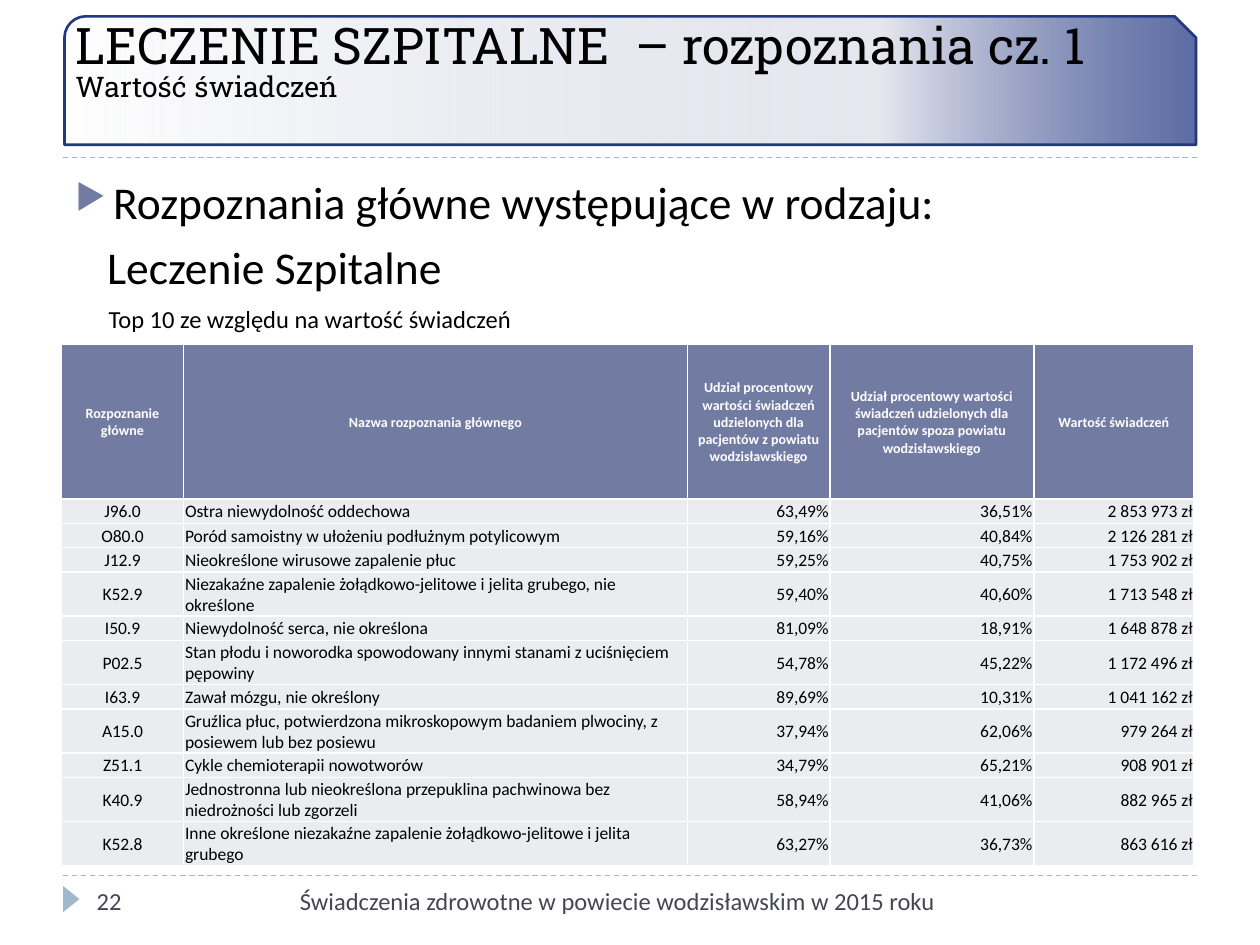
from collections import namedtuple

from lxml import etree
from pptx import Presentation
from pptx import util as u
from pptx.dml.color import RGBColor
from pptx.enum import dml, shapes, text
from pptx.oxml import ns, parse_xml

Box = namedtuple("Box", "left top width height")

BLACK = RGBColor(0x00, 0x00, 0x00)
WHITE = RGBColor(0xFF, 0xFF, 0xFF)
NAVY = RGBColor(0x23, 0x38, 0x83)
MIST = RGBColor(0xE6, 0xE7, 0xEF)
HAZE = RGBColor(0xCC, 0xD0, 0xE0)
SLATE = RGBColor(0x72, 0x7C, 0xA3)
PALE = RGBColor(0xEB, 0xEC, 0xF0)
SKY = RGBColor(0x9F, 0xB8, 0xCD)
GREY = RGBColor(0x46, 0x46, 0x53)

BODY_FONT = "Calibri"
TITLE_FONT = "Roboto Slab"
LEFT, CENTER, RIGHT = text.PP_ALIGN.LEFT, text.PP_ALIGN.CENTER, text.PP_ALIGN.RIGHT

HEADERS = (
    "Rozpoznanie główne",
    "Nazwa rozpoznania głównego",
    "Udział procentowy wartości świadczeń udzielonych dla pacjentów z powiatu wodzisławskiego",
    "Udział procentowy wartości świadczeń udzielonych dla pacjentów spoza powiatu wodzisławskiego",
    "Wartość świadczeń",
)
DIAGNOSES = (
    ("J96.0", "Ostra niewydolność oddechowa", "63,49%", "36,51%", "2 853 973 zł"),
    ("O80.0", "Poród samoistny w ułożeniu podłużnym potylicowym", "59,16%", "40,84%", "2 126 281 zł"),
    ("J12.9", "Nieokreślone wirusowe zapalenie płuc", "59,25%", "40,75%", "1 753 902 zł"),
    ("K52.9", "Niezakaźne zapalenie żołądkowo-jelitowe i jelita grubego, nie określone",
     "59,40%", "40,60%", "1 713 548 zł"),
    ("I50.9", "Niewydolność serca, nie określona", "81,09%", "18,91%", "1 648 878 zł"),
    ("P02.5", "Stan płodu i noworodka spowodowany innymi stanami z uciśnięciem pępowiny",
     "54,78%", "45,22%", "1 172 496 zł"),
    ("I63.9", "Zawał mózgu, nie określony", "89,69%", "10,31%", "1 041 162 zł"),
    ("A15.0", "Gruźlica płuc, potwierdzona mikroskopowym badaniem plwociny, z posiewem lub bez posiewu",
     "37,94%", "62,06%", "979 264 zł"),
    ("Z51.1", "Cykle chemioterapii nowotworów", "34,79%", "65,21%", "908 901 zł"),
    ("K40.9", "Jednostronna lub nieokreślona przepuklina pachwinowa bez niedrożności lub zgorzeli",
     "58,94%", "41,06%", "882 965 zł"),
    ("K52.8", "Inne określone niezakaźne zapalenie żołądkowo-jelitowe i jelita grubego",
     "63,27%", "36,73%", "863 616 zł"),
)
COLUMN_WIDTHS = (2.46, 10.16, 2.87, 4.11, 3.23)
COLUMN_ALIGNS = (CENTER, LEFT, RIGHT, RIGHT, RIGHT)
HEADER_HEIGHT, ONE_LINE, TWO_LINES = 3.12, 0.49, 0.89
LONGEST_LINE = 60


def lengths(box):
    return [u.Cm(value) for value in box]


def add_span(para, words, size, color, font=BODY_FONT, bold=False):
    span = para.add_run()
    span.text = words
    span.font.size = u.Pt(size)
    span.font.name = font
    span.font.bold = bold
    span.font.color.rgb = color


def add_text_frame(page, box, inset):
    frame = page.shapes.add_textbox(*lengths(box)).text_frame
    frame.word_wrap = True
    frame.margin_top = frame.margin_bottom = u.Cm(inset)
    return frame


def add_rule(page, left, top, width):
    rule = page.shapes.add_connector(
        shapes.MSO_CONNECTOR.STRAIGHT, *lengths((left, top, left + width, top)))
    rule.line.color.rgb = SKY
    rule.line.width = u.Pt(0.75)
    rule.line.dash_style = dml.MSO_LINE.DASH
    etree.SubElement(rule._element.spPr, ns.qn("a:effectLst"))


def fade_fill(shape):
    stops = "".join(
        f'<a:gs pos="{place * 1000}"><a:srgbClr val="{color}">'
        f'<a:alpha val="{opacity * 1000}"/></a:srgbClr></a:gs>'
        for place, color, opacity in ((0, NAVY, 73), (28, MIST, 100), (100, HAZE, 0)))
    shape.fill.background()
    blank = shape._element.spPr.find(ns.qn("a:noFill"))
    blank.getparent().replace(blank, parse_xml(
        f'<a:gradFill {ns.nsdecls("a")} rotWithShape="1"><a:gsLst>{stops}</a:gsLst>'
        '<a:lin ang="10800000" scaled="0"/></a:gradFill>'))


def add_title(page, box):
    banner = page.shapes.add_shape(
        shapes.MSO_SHAPE.SNIP_ROUND_RECTANGLE, *lengths(box))
    banner.shadow.inherit = False
    fade_fill(banner)
    banner.line.color.rgb = NAVY
    banner.line.width = u.Pt(1.5)
    frame = add_text_frame(
        page, Box(box.left - 0.03, box.top - 0.05, box.width, box.height), 0)
    add_span(frame.paragraphs[0], "LECZENIE SZPITALNE  – rozpoznania cz. 1",
             28.8, BLACK, TITLE_FONT)
    subtitle = frame.add_paragraph()
    subtitle.line_spacing = 0.85
    add_span(subtitle, "Wartość świadczeń", 16.2, BLACK, TITLE_FONT)
    add_rule(page, box.left - 0.03, box.top + box.height + 0.25, 22.86)


def add_intro(page, box):
    frame = add_text_frame(page, box, 0.13)
    lines = (
        ("Rozpoznania główne występujące w rodzaju:", 26, 0.76, -0.76),
        ("Leczenie Szpitalne", 26, 0.64, 0),
        ("Top 10 ze względu na wartość świadczeń", 14, 0.67, 0),
    )
    for index, (words, size, margin, indent) in enumerate(lines):
        para = frame.add_paragraph() if index else frame.paragraphs[0]
        para.alignment = text.PP_ALIGN.JUSTIFY
        properties = para._p.get_or_add_pPr()
        properties.set("marL", str(u.Cm(margin)))
        properties.set("indent", str(u.Cm(indent)))
        if index:
            para.space_before = u.Pt(6)
        else:
            color = etree.SubElement(properties, ns.qn("a:buClr"))
            etree.SubElement(color, ns.qn("a:srgbClr"), val=str(SLATE))
            etree.SubElement(properties, ns.qn("a:buSzPct"), val="76000")
            etree.SubElement(properties, ns.qn("a:buChar"), char="▶")
        add_span(para, words, size, BLACK)


def fill_cell(cell, words, size, color, bold, align, fill):
    cell.margin_left = cell.margin_right = cell.margin_top = u.Cm(0.03)
    cell.margin_bottom = 0
    cell.vertical_anchor = text.MSO_ANCHOR.MIDDLE
    para = cell.text_frame.paragraphs[0]
    para.alignment = align
    add_span(para, words, size, color, bold=bold)
    properties = cell._tc.get_or_add_tcPr()
    for side in ("lnL", "lnR", "lnT", "lnB"):
        border = etree.SubElement(properties, ns.qn(f"a:{side}"), w=str(u.Pt(1)))
        solid = etree.SubElement(border, ns.qn("a:solidFill"))
        etree.SubElement(solid, ns.qn("a:srgbClr"), val=str(WHITE))
    cell.fill.solid()
    cell.fill.fore_color.rgb = fill


def add_diagnoses(page, box):
    table = page.shapes.add_table(
        len(DIAGNOSES) + 1, len(HEADERS), *lengths(box)).table
    for column, width in zip(table.columns, COLUMN_WIDTHS):
        column.width = u.Cm(width)
    table.rows[0].height = u.Cm(HEADER_HEIGHT)
    for index, words in enumerate(HEADERS):
        fill_cell(table.cell(0, index), words, 8, WHITE, True, CENTER, SLATE)
    for number, record in enumerate(DIAGNOSES, 1):
        height = TWO_LINES if len(record[1]) > LONGEST_LINE else ONE_LINE
        table.rows[number].height = u.Cm(height)
        for index, (words, align) in enumerate(zip(record, COLUMN_ALIGNS)):
            fill_cell(table.cell(number, index), words, 10, BLACK, False, align, PALE)


def add_footer(page, box):
    add_rule(page, box.left, box.top, box.width)
    marker = page.shapes.add_shape(
        shapes.MSO_SHAPE.ISOSCELES_TRIANGLE,
        *lengths((box.left - 0.1, box.top + 0.31, 0.53, 0.33)))
    marker.rotation = 90
    marker.shadow.inherit = False
    marker.fill.solid()
    marker.fill.fore_color.rgb = SKY
    marker.line.fill.background()
    labels = (
        ("22", 0.43, 5.51, LEFT),
        ("Świadczenia zdrowotne w powiecie wodzisławskim w 2015 roku", 4.24, 13.59, RIGHT),
    )
    for words, offset, width, align in labels:
        frame = add_text_frame(
            page, Box(box.left + offset, box.top + 0.08, width, box.height), 0.13)
        frame.paragraphs[0].alignment = align
        add_span(frame.paragraphs[0], words, 14, GREY)


def main():
    deck = Presentation()
    deck.slide_width, deck.slide_height = u.Cm(25.4), u.Cm(19.05)
    page = deck.slides.add_slide(deck.slide_layouts[6])
    add_title(page, Box(1.3, 0.33, 22.81, 2.59))
    add_intro(page, Box(1.27, 3.38, 22.86, 3.5))
    add_diagnoses(page, Box(1.24, 6.94, 22.83, 10.57))
    add_footer(page, Box(1.27, 17.65, 22.86, 1.02))
    deck.save("out.pptx")


if __name__ == "__main__":
    main()
